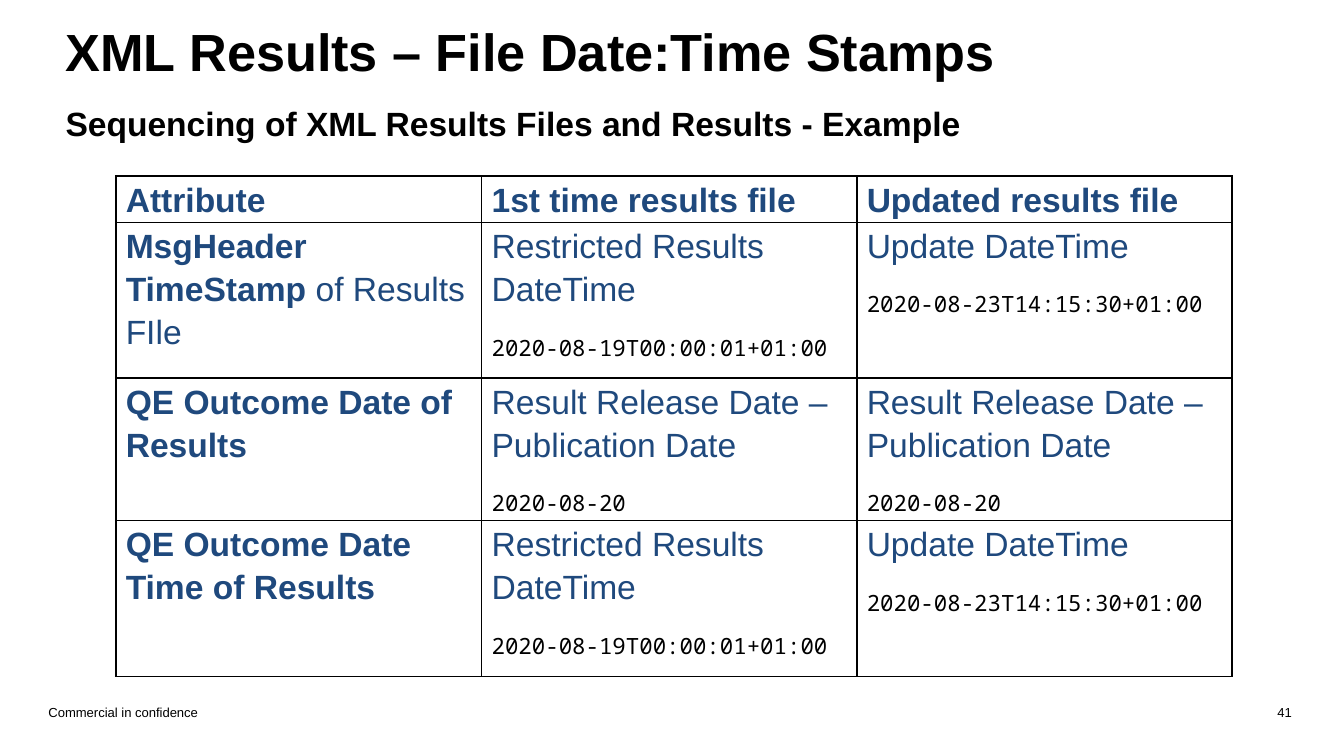
from pptx import Presentation
from pptx.dml.color import RGBColor
from pptx.enum import text
from pptx.oxml import parse_xml
from pptx.oxml.ns import nsdecls
from pptx.util import Pt

BLACK, NAVY = "000000", "1F497D"


def style(font, size, color=BLACK, bold=False, name="Arial"):
    font.name, font.size, font.bold = name, Pt(size), bold
    font.color.rgb = RGBColor.from_string(color)


def label(words, left, top, width, height, size, bold=False, inset=True):
    """Add a one-line text box and return its paragraph."""
    box = slide.shapes.add_textbox(Pt(left), Pt(top), Pt(width), Pt(height))
    frame = box.text_frame
    frame.word_wrap = True
    if not inset:
        frame.margin_left = frame.margin_right = 0
        frame.margin_top = frame.margin_bottom = 0
        frame.vertical_anchor = text.MSO_ANCHOR.MIDDLE
    para = frame.paragraphs[0]
    para.text = words
    style(para.font, size, bold=bold)
    return para


deck = Presentation()
deck.slide_width, deck.slide_height = Pt(720), Pt(405)
slide = deck.slides.add_slide(deck.slide_layouts[5])

# Title and subtitle
title = slide.shapes.title
title.left, title.top, title.width, title.height = Pt(28), Pt(5), Pt(666), Pt(43.2)
frame = title.text_frame
frame.text = "XML Results – File Date:Time Stamps"
frame.auto_size = text.MSO_AUTO_SIZE.NONE
frame.vertical_anchor = text.MSO_ANCHOR.BOTTOM
para = frame.paragraphs[0]
para.alignment = text.PP_ALIGN.LEFT
para.line_spacing = 0.9
style(para.font, 28, bold=True)

para = label("Sequencing of XML Results Files and Results - Example",
             28, 54, 666, 34, 18, bold=True)
para.line_spacing = 0.9

# Table: each cell is a list of paragraphs; the second one is a time stamp
first = ["Restricted Results DateTime", "2020-08-19T00:00:01+01:00"]
update = ["Update DateTime", "2020-08-23T14:15:30+01:00"]
release = ["Result Release Date – Publication Date", "2020-08-20"]
rows = [
    [["Attribute"], ["1st time results file"], ["Updated results file"]],
    [["MsgHeader TimeStamp "], first, update],
    [["QE Outcome Date of Results"], release, release],
    [["QE Outcome Date Time of Results"], first, update],
]
widths = [196, 201, 201]
heights = [23, 83.5, 75.5, 83.5]

grid = slide.shapes.add_table(4, 3, Pt(62), Pt(94.3), Pt(sum(widths)), Pt(sum(heights)))
table = grid.table
for col, width in zip(table.columns, widths):
    col.width = Pt(width)

for r, row in enumerate(rows):
    table.rows[r].height = Pt(heights[r])
    for c, lines in enumerate(row):
        cell = table.cell(r, c)
        cell.margin_left = cell.margin_right = Pt(5.4)
        cell.margin_top = cell.margin_bottom = 0
        cell.text = "\n".join(lines)
        for i, para in enumerate(cell.text_frame.paragraphs):
            para.line_spacing = 1.15
            para.space_after = Pt(10)
            if i:
                style(para.font, 12, name="Noto Sans Mono")
            else:
                style(para.font, 18, NAVY, bold=r == 0 or c == 0)
        props = cell._tc.get_or_add_tcPr()
        for side in ("lnL", "lnR", "lnT", "lnB"):
            props.append(parse_xml(
                f'<a:{side} {nsdecls("a")} w="12700"><a:solidFill>'
                f'<a:srgbClr val="{BLACK}"/></a:solidFill></a:{side}>'))
        cell.fill.background()

run = table.cell(1, 0).text_frame.paragraphs[0].add_run()
run.text = "of Results FIle"
run.font.bold = False

# Footer
label("Commercial in confidence", 26, 377.3, 324, 8.6, 7, inset=False)
para = label("41", 665, 377.3, 27, 8.6, 7, inset=False)
para.alignment = text.PP_ALIGN.RIGHT

deck.save("out.pptx")
